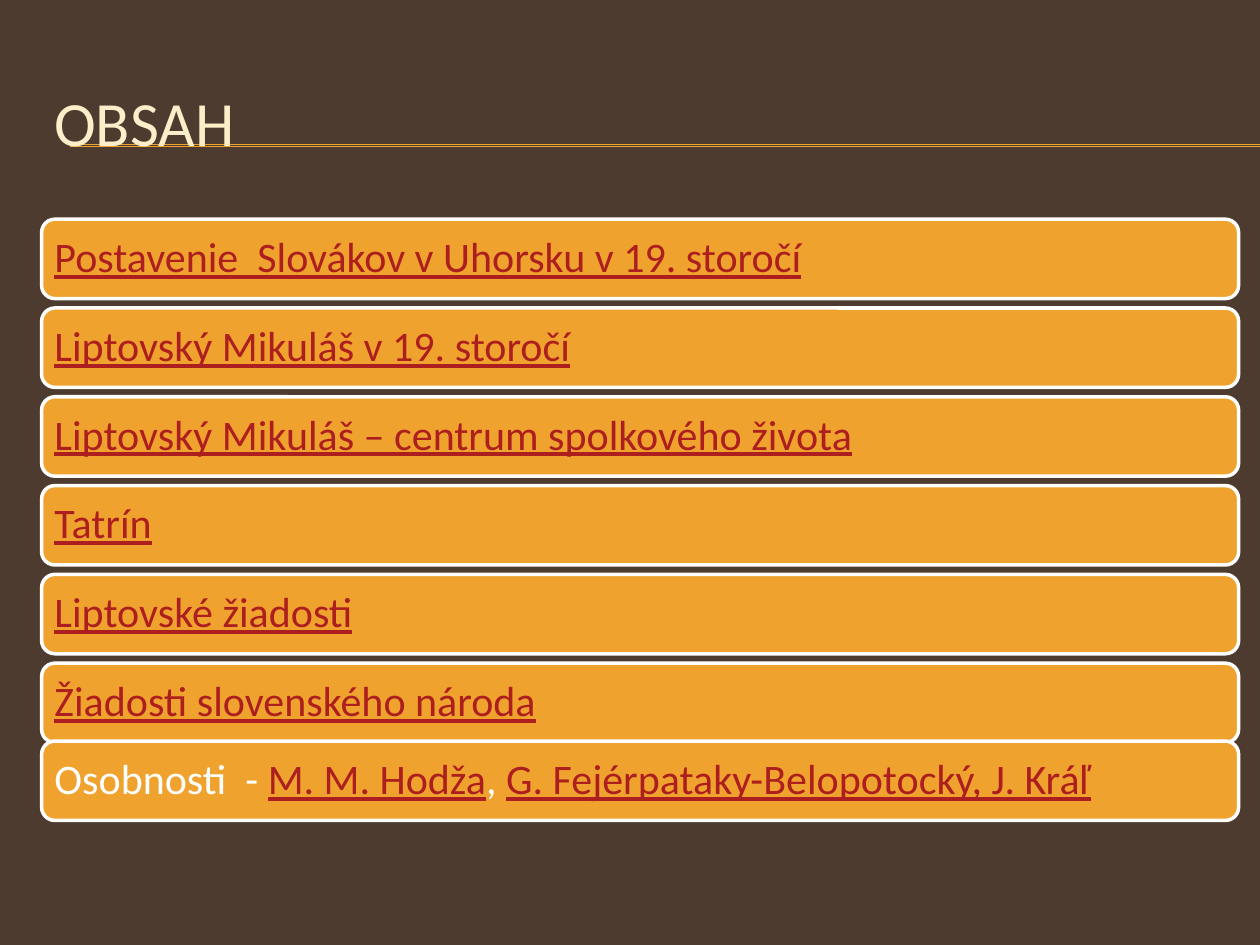
from dataclasses import dataclass

from lxml import etree
from pptx import Presentation
from pptx.dml.color import RGBColor
from pptx.enum import shapes, text
from pptx.oxml import ns
from pptx.shapes.autoshape import Shape
from pptx.slide import Slide
from pptx.util import Cm, Pt

BROWN = RGBColor(0x4E, 0x3B, 0x30)
ORANGE = RGBColor(0xF0, 0xA2, 0x2E)
CREAM = RGBColor(0xFB, 0xEE, 0xC9)
RED = RGBColor(0xAD, 0x1F, 0x1F)
WHITE = RGBColor(0xFF, 0xFF, 0xFF)
FONT = "Calibri"

SLIDE_WIDTH = 25.4
LEFT = 0.84
WIDTH = 24.13
BAR_HEIGHT = 1.6
FIRST_TOP = 4.42
PITCH = 1.79
LAST_TOP = 14.94


@dataclass(frozen=True)
class Segment:
    wording: str
    linked: bool = True


@dataclass(frozen=True)
class Bar:
    top: float
    segments: tuple[Segment, ...]


TOPICS = (
    "Postavenie  Slovákov v Uhorsku v 19. storočí",
    "Liptovský Mikuláš v 19. storočí",
    "Liptovský Mikuláš – centrum spolkového života",
    "Tatrín",
    "Liptovské žiadosti",
    "Žiadosti slovenského národa",
)
PEOPLE = (
    Segment("Osobnosti  - ", linked=False),
    Segment("M. M. Hodža"),
    Segment(", ", linked=False),
    Segment("G. Fejérpataky-Belopotocký, J. Kráľ"),
)


def draw_rule(slide: Slide, top: float) -> None:
    rule = slide.shapes.add_connector(
        shapes.MSO_CONNECTOR.STRAIGHT, Cm(1.42), Cm(top), Cm(SLIDE_WIDTH), Cm(top)
    )
    rule.line.color.rgb = ORANGE
    rule.line.width = Pt(0.75)
    etree.SubElement(rule._element.spPr, ns.qn("a:effectLst"))


def format_title(title: Shape) -> None:
    title.left, title.top = Cm(LEFT), Cm(1.27)
    title.width, title.height = Cm(WIDTH), Cm(2.34)
    title.text_frame.text = "OBSAH"
    title.text_frame.vertical_anchor = text.MSO_ANCHOR.MIDDLE
    paragraph = title.text_frame.paragraphs[0]
    paragraph.alignment = text.PP_ALIGN.LEFT
    font = paragraph.runs[0].font
    font.name, font.size = FONT, Pt(36)
    font.color.rgb = CREAM


def draw_bar(slide: Slide, bar: Bar) -> None:
    shape = slide.shapes.add_shape(
        shapes.MSO_SHAPE.ROUNDED_RECTANGLE,
        Cm(LEFT), Cm(bar.top), Cm(WIDTH), Cm(BAR_HEIGHT),
    )
    shape.shadow.inherit = False
    shape.fill.solid()
    shape.fill.fore_color.rgb = ORANGE
    shape.line.color.rgb = WHITE
    shape.line.width = Pt(2)
    frame = shape.text_frame
    frame.word_wrap = True
    frame.vertical_anchor = text.MSO_ANCHOR.MIDDLE
    frame.margin_left = frame.margin_right = Cm(0.18)
    paragraph = frame.paragraphs[0]
    paragraph.alignment = text.PP_ALIGN.LEFT
    paragraph.line_spacing = 0.9
    for segment in bar.segments:
        run = paragraph.add_run()
        run.text = segment.wording
        run.font.name, run.font.size = FONT, Pt(24)
        run.font.underline = segment.linked
        run.font.color.rgb = RED if segment.linked else WHITE


def main() -> None:
    presentation = Presentation()
    presentation.slide_width, presentation.slide_height = Cm(SLIDE_WIDTH), Cm(19.05)
    slide = presentation.slides.add_slide(presentation.slide_layouts[5])
    slide.background.fill.solid()
    slide.background.fill.fore_color.rgb = BROWN

    for top in (2.92, 2.95):
        draw_rule(slide, top)

    title = slide.shapes.title
    format_title(title)
    slide.shapes._spTree.append(title._element)

    bars = [
        Bar(FIRST_TOP + index * PITCH, (Segment(topic),))
        for index, topic in enumerate(TOPICS)
    ]
    for bar in [*bars, Bar(LAST_TOP, PEOPLE)]:
        draw_bar(slide, bar)

    presentation.save("out.pptx")


if __name__ == "__main__":
    main()
